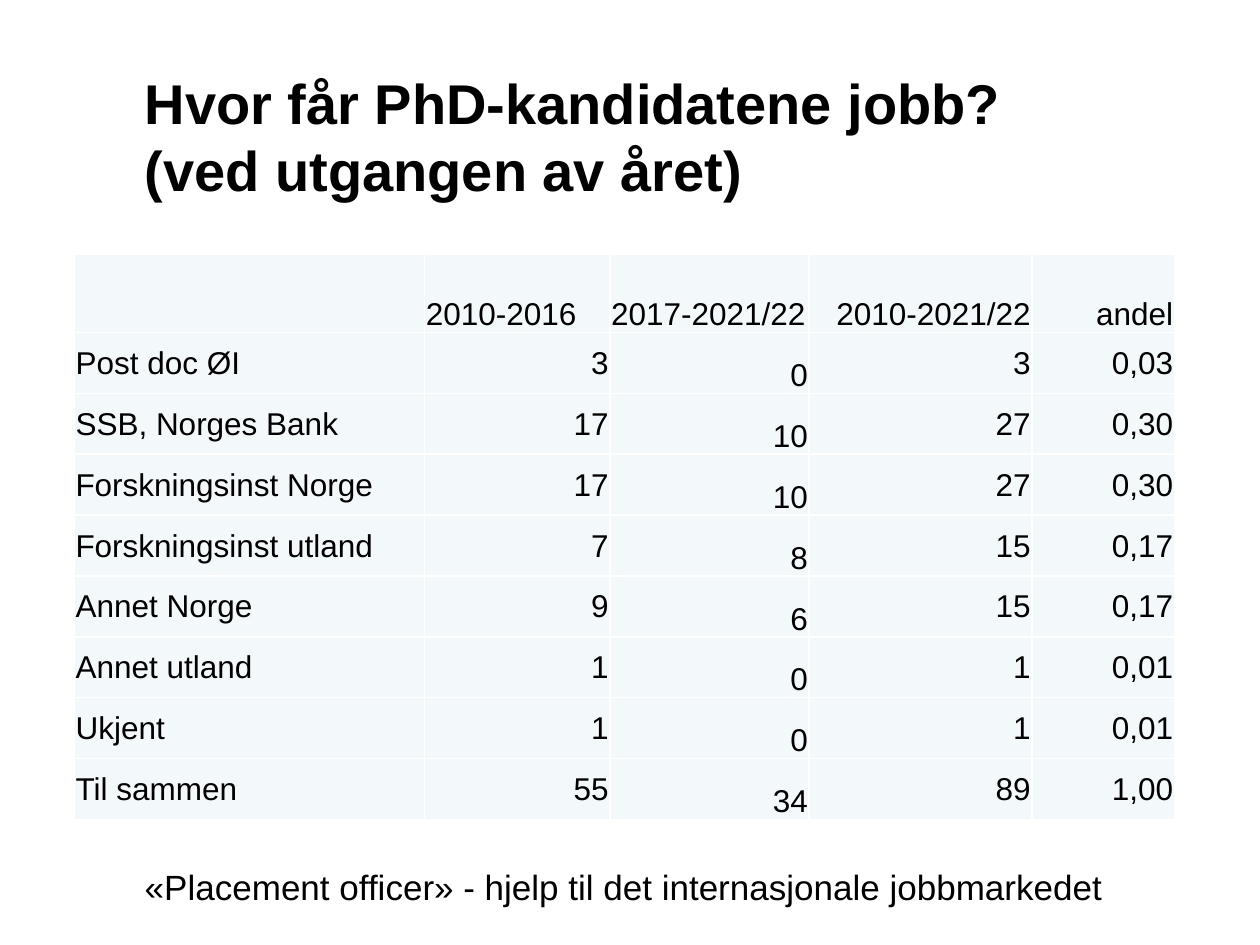
from dataclasses import dataclass

from lxml.etree import SubElement
from pptx import Presentation
from pptx.dml.color import RGBColor
from pptx.enum.text import MSO_ANCHOR, MSO_AUTO_SIZE, PP_ALIGN
from pptx.oxml.ns import qn
from pptx.slide import Slide
from pptx.table import _Cell
from pptx.text.text import _Paragraph
from pptx.util import Pt

BLACK = RGBColor(0x00, 0x00, 0x00)
WHITE = RGBColor(0xFF, 0xFF, 0xFF)
PALE_TEAL = RGBColor(0xF3, 0xF9, 0xFA)

FONT_NAME = "Arial"
CELL_MARGINS = {
    "margin_left": Pt(0.7),
    "margin_right": Pt(0.7),
    "margin_top": Pt(0.7),
    "margin_bottom": Pt(0),
}
BORDER_SIDES = ("a:lnL", "a:lnR", "a:lnT", "a:lnB")

TABLE_LEFT, TABLE_TOP = 42.5, 145.4
COLUMN_WIDTHS = (200.2, 105.8, 113.8, 127.4, 81.4)
HEADER_HEIGHT, ROW_HEIGHT = 44.6, 34.8
LATE_PERIOD_COLUMN = 2
TABLE_ROWS = (
    ("", "2010-2016", "2017-2021/22", "2010-2021/22", "andel"),
    ("Post doc ØI", "3", "0", "3", "0,03"),
    ("SSB, Norges Bank", "17", "10", "27", "0,30"),
    ("Forskningsinst Norge", "17", "10", "27", "0,30"),
    ("Forskningsinst utland", "7", "8", "15", "0,17"),
    ("Annet Norge", "9", "6", "15", "0,17"),
    ("Annet utland", "1", "0", "1", "0,01"),
    ("Ukjent", "1", "0", "1", "0,01"),
    ("Til sammen", "55", "34", "89", "1,00"),
)


@dataclass(frozen=True)
class TextBlock:
    text: str
    left: float
    top: float
    width: float
    height: float
    size: float
    bold: bool
    anchor: MSO_ANCHOR
    auto_size: MSO_AUTO_SIZE


TEXT_BLOCKS = (
    TextBlock("Hvor får PhD-kandidatene jobb?\v(ved utgangen av året)",
              75.6, 32.4, 606.2, 90, 32, True,
              MSO_ANCHOR.MIDDLE, MSO_AUTO_SIZE.NONE),
    TextBlock("«Placement officer» - hjelp til det internasjonale jobbmarkedet",
              75.6, 491, 618.5, 31.5, 20, False,
              MSO_ANCHOR.TOP, MSO_AUTO_SIZE.SHAPE_TO_FIT_TEXT),
)


def format_runs(paragraph: _Paragraph, size: float, bold: bool = False) -> None:
    font_format = {"name": FONT_NAME, "size": Pt(size), "bold": bold}
    for run in paragraph.runs:
        for attribute, value in font_format.items():
            setattr(run.font, attribute, value)
        run.font.color.rgb = BLACK


def add_text_block(slide: Slide, block: TextBlock) -> None:
    shape = slide.shapes.add_textbox(
        Pt(block.left), Pt(block.top), Pt(block.width), Pt(block.height))
    frame_format = {
        "word_wrap": True,
        "auto_size": block.auto_size,
        "vertical_anchor": block.anchor,
        "text": block.text,
    }
    for attribute, value in frame_format.items():
        setattr(shape.text_frame, attribute, value)
    format_runs(shape.text_frame.paragraphs[0], block.size, block.bold)


def add_cell_borders(cell: _Cell) -> None:
    """Add the white lines; call before the fill, which must follow them."""
    properties = cell._tc.get_or_add_tcPr()
    for side in BORDER_SIDES:
        line = SubElement(properties, qn(side), w=str(Pt(1)))
        fill = SubElement(line, qn("a:solidFill"))
        SubElement(fill, qn("a:srgbClr"), val=str(WHITE))


def fill_cell(cell: _Cell, text: str, row: int, column: int) -> None:
    at_bottom = row == 0 or column == LATE_PERIOD_COLUMN
    at_left = column == 0 or (row == 0 and column <= LATE_PERIOD_COLUMN)
    cell_format = {
        **CELL_MARGINS,
        "vertical_anchor": MSO_ANCHOR.BOTTOM if at_bottom else MSO_ANCHOR.MIDDLE,
        "text": text,
    }
    for attribute, value in cell_format.items():
        setattr(cell, attribute, value)
    paragraph = cell.text_frame.paragraphs[0]
    paragraph.alignment = PP_ALIGN.LEFT if at_left else PP_ALIGN.RIGHT
    format_runs(paragraph, 18)
    add_cell_borders(cell)
    cell.fill.solid()
    cell.fill.fore_color.rgb = PALE_TEAL


def add_job_table(slide: Slide) -> None:
    row_heights = [HEADER_HEIGHT] + [ROW_HEIGHT] * (len(TABLE_ROWS) - 1)
    table = slide.shapes.add_table(
        len(TABLE_ROWS), len(COLUMN_WIDTHS), Pt(TABLE_LEFT), Pt(TABLE_TOP),
        Pt(sum(COLUMN_WIDTHS)), Pt(sum(row_heights))).table
    table.first_row = False
    table.horz_banding = False
    for column, width in zip(table.columns, COLUMN_WIDTHS):
        column.width = Pt(width)
    for row, height in zip(table.rows, row_heights):
        row.height = Pt(height)
    for row_index, values in enumerate(TABLE_ROWS):
        for column_index, text in enumerate(values):
            fill_cell(table.cell(row_index, column_index), text,
                      row_index, column_index)


def main() -> None:
    presentation = Presentation()
    presentation.slide_width = Pt(720)
    presentation.slide_height = Pt(540)
    slide = presentation.slides.add_slide(presentation.slide_layouts[6])
    for block in TEXT_BLOCKS:
        add_text_block(slide, block)
    add_job_table(slide)
    presentation.save("out.pptx")


if __name__ == "__main__":
    main()
